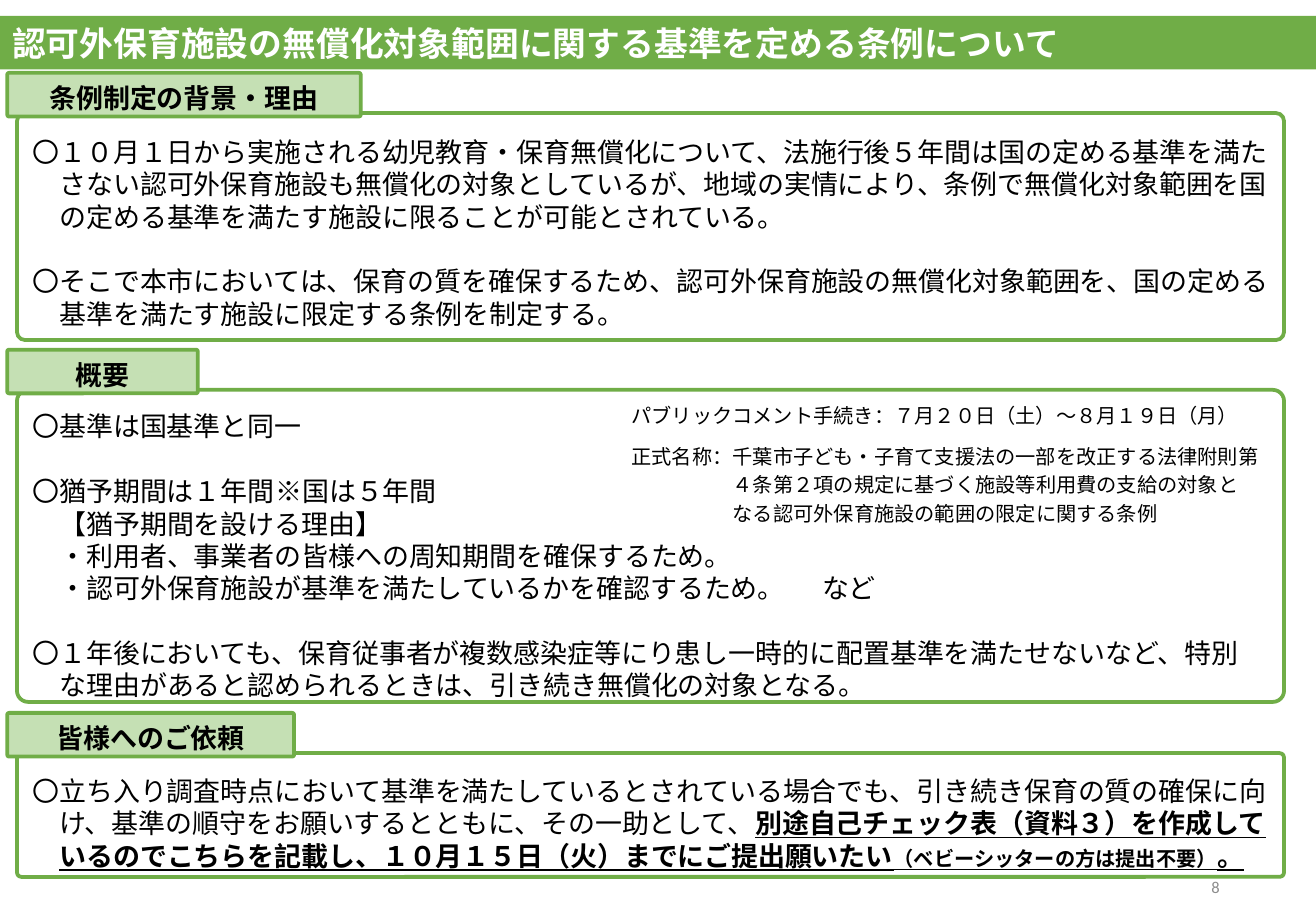
import pptx
import pptx.util
import pptx.dml.color
import pptx.enum.shapes
import pptx.enum.text
from lxml import etree

Pt = pptx.util.Pt
ALIGN = pptx.enum.text.PP_ALIGN
ANCHOR = pptx.enum.text.MSO_ANCHOR
SHAPE = pptx.enum.shapes.MSO_SHAPE

# Content
TITLE = "認可外保育施設の無償化対象範囲に関する基準を定める条例について"
PAGE_NUMBER = "8"

# Paragraph styles: left margin, first-line indent, tab stop
POINT, FLAT, INSET = (16, -16, None), (0, 0, 176), (0, 16, 480)

# Paragraph: style, blank line before, text, underlined tail of (text, size), None = line break
SECTIONS = [
    dict(
        heading="条例制定の背景・理由", heading_width=209.5,
        top=67, height=134.6, body_top=74.9, body_height=143.3,
        paragraphs=[
            (POINT, False,
             "〇１０月１日から実施される幼児教育・保育無償化について、法施行後５年間は国の定める基準を満た\v"
             "さない認可外保育施設も無償化の対象としているが、地域の実情により、条例で無償化対象範囲を国\v"
             "の定める基準を満たす施設に限ることが可能とされている。", []),
            (POINT, True,
             "〇そこで本市においては、保育の質を確保するため、認可外保育施設の無償化対象範囲を、国の定める\v"
             "基準を満たす施設に限定する条例を制定する。", []),
        ]),
    dict(
        heading="概要", heading_width=113,
        top=231.1, height=185, body_top=237.6, body_height=200.9,
        paragraphs=[
            (POINT, False, "〇基準は国基準と同一", []),
            (FLAT, True, "〇猶予期間は１年間\t※国は５年間", []),
            (INSET, False, "【猶予期間を設ける理由】", []),
            (INSET, False, "・利用者、事業者の皆様への周知期間を確保するため。", []),
            (INSET, False, "・認可外保育施設が基準を満たしているかを確認するため。\tなど", []),
            (POINT, True,
             "〇１年後においても、保育従事者が複数感染症等にり患し一時的に配置基準を満たせないなど、特別\v"
             "な理由があると認められるときは、引き続き無償化の対象となる。", []),
        ]),
    dict(
        heading="皆様へのご依頼", heading_width=170,
        top=446.4, height=73.4, body_top=453.6, body_height=65.5,
        paragraphs=[
            (POINT, False,
             "〇立ち入り調査時点において基準を満たしているとされている場合でも、引き続き保育の質の確保に向\v"
             "け、基準の順守をお願いするとともに、その一助として、",
             [("別途自己チェック表（資料３）を作成して", 16),
              None,
              ("いるのでこちらを記載し、１０月１５日（火）までにご提出願いたい", 16),
              ("（ベビーシッターの方は提出不要）", 12),
              ("。", 16)]),
        ]),
]

# Side notes: text, box, hanging indent
SIDE_NOTES = [
    ("正式名称：千葉市子ども・子育て支援法の一部を改正する法律附則第\v"
     "４条第２項の規定に基づく施設等利用費の支給の対象と\v"
     "なる認可外保育施設の範囲の限定に関する条例", (367.2, 237.6, 468.7, 97.2), 60),
    ("パブリックコメント手続き：７月２０日（土）～８月１９日（月）",
     (367.2, 196.6, 436.3, 97.2), 0),
]

COLORS = {"green": "70AD47", "pale": "C5E0B4", "black": "000000",
          "white": "FFFFFF", "grey": "8C8C8C"}
JAPANESE, LATIN = "Noto Sans CJK JP", "Calibri"
LINE_PITCH = 19.2


def rgb(name):
    return pptx.dml.color.RGBColor.from_string(COLORS[name])


def style_run(run, size, color="black", bold=False, underline=False, font=JAPANESE):
    run.font.size = Pt(size)
    run.font.color.rgb = rgb(color)
    run.font.bold = bold
    run.font.underline = underline
    run.font.name = font
    east_asian = etree.SubElement(run.font._element, pptx.oxml.ns.qn("a:ea"))
    east_asian.set("typeface", font)


def indent(paragraph, margin, first_line, tab=None):
    properties = paragraph._p.get_or_add_pPr()
    properties.set("marL", str(Pt(margin)))
    properties.set("indent", str(Pt(first_line)))
    if tab:
        tabs = etree.SubElement(properties, pptx.oxml.ns.qn("a:tabLst"))
        etree.SubElement(tabs, pptx.oxml.ns.qn("a:tab"), pos=str(Pt(tab)), algn="l")


def add_text_box(box, anchor=ANCHOR.TOP):
    frame = slide.shapes.add_textbox(*map(Pt, box)).text_frame
    frame.word_wrap = True
    frame.vertical_anchor = anchor
    return frame


def add_panel(box, radius, fill=None):
    panel = slide.shapes.add_shape(SHAPE.ROUNDED_RECTANGLE, *map(Pt, box))
    panel.adjustments[0] = radius
    panel.shadow.inherit = False
    panel.line.color.rgb = rgb("green")
    panel.line.width = Pt(2.25)
    if fill:
        panel.fill.solid()
        panel.fill.fore_color.rgb = rgb(fill)
    else:
        panel.fill.background()
    return panel


def add_section(section):
    add_panel((10.1, section["top"], 751, section["height"]), 0.036)

    # Heading tab over the top edge of the panel
    heading = add_panel((4.3, section["top"] - 23.8, section["heading_width"], 25.9),
                        0.042, "pale").text_frame
    heading.vertical_anchor = ANCHOR.MIDDLE
    heading.margin_top, heading.margin_bottom = Pt(7.2), Pt(3.6)
    heading.text = section["heading"]
    heading.paragraphs[0].alignment = ALIGN.CENTER
    style_run(heading.paragraphs[0].runs[0], 16, bold=True)

    # Body text
    body = add_text_box((12.2, section["body_top"], 758.9, section["body_height"]))
    body.margin_top = Pt(5.4)
    for number, (style, gap, text, tail) in enumerate(section["paragraphs"]):
        paragraph = body.add_paragraph() if number else body.paragraphs[0]
        paragraph.text = text
        indent(paragraph, *style)
        paragraph.line_spacing = Pt(LINE_PITCH)
        if gap:
            paragraph.space_before = Pt(LINE_PITCH)
        for run in paragraph.runs:
            style_run(run, 16)
        for piece in tail:
            if piece is None:
                paragraph.add_line_break()
                continue
            run = paragraph.add_run()
            run.text = piece[0]
            style_run(run, piece[1], bold=True, underline=True)


deck = pptx.Presentation()
deck.slide_width, deck.slide_height = Pt(780), Pt(540)
slide = deck.slides.add_slide(deck.slide_layouts[5])

# Title band
title = slide.shapes.title
title.left, title.top, title.width, title.height = map(Pt, (0, 9.4, 780, 31.7))
title.fill.solid()
title.fill.fore_color.rgb = rgb("green")
title.text_frame.text = TITLE
title.text_frame.vertical_anchor = ANCHOR.MIDDLE
title.text_frame.auto_size = pptx.enum.text.MSO_AUTO_SIZE.NONE
title.text_frame.paragraphs[0].alignment = ALIGN.LEFT
style_run(title.text_frame.paragraphs[0].runs[0], 20, "white", bold=True)

# Sections
for section in SECTIONS:
    add_section(section)

# Side notes
for text, box, hanging in SIDE_NOTES:
    note = add_text_box(box, ANCHOR.MIDDLE)
    note.text = text
    indent(note.paragraphs[0], hanging, -hanging)
    note.paragraphs[0].line_spacing = Pt(16.8)
    for run in note.paragraphs[0].runs:
        style_run(run, 12)

# Page number
page = add_text_box((554.4, 511.9, 175.7, 28.1), ANCHOR.MIDDLE)
page.text = PAGE_NUMBER
page.paragraphs[0].alignment = ALIGN.RIGHT
style_run(page.paragraphs[0].runs[0], 9.8, "grey", font=LATIN)

deck.save("out.pptx")
